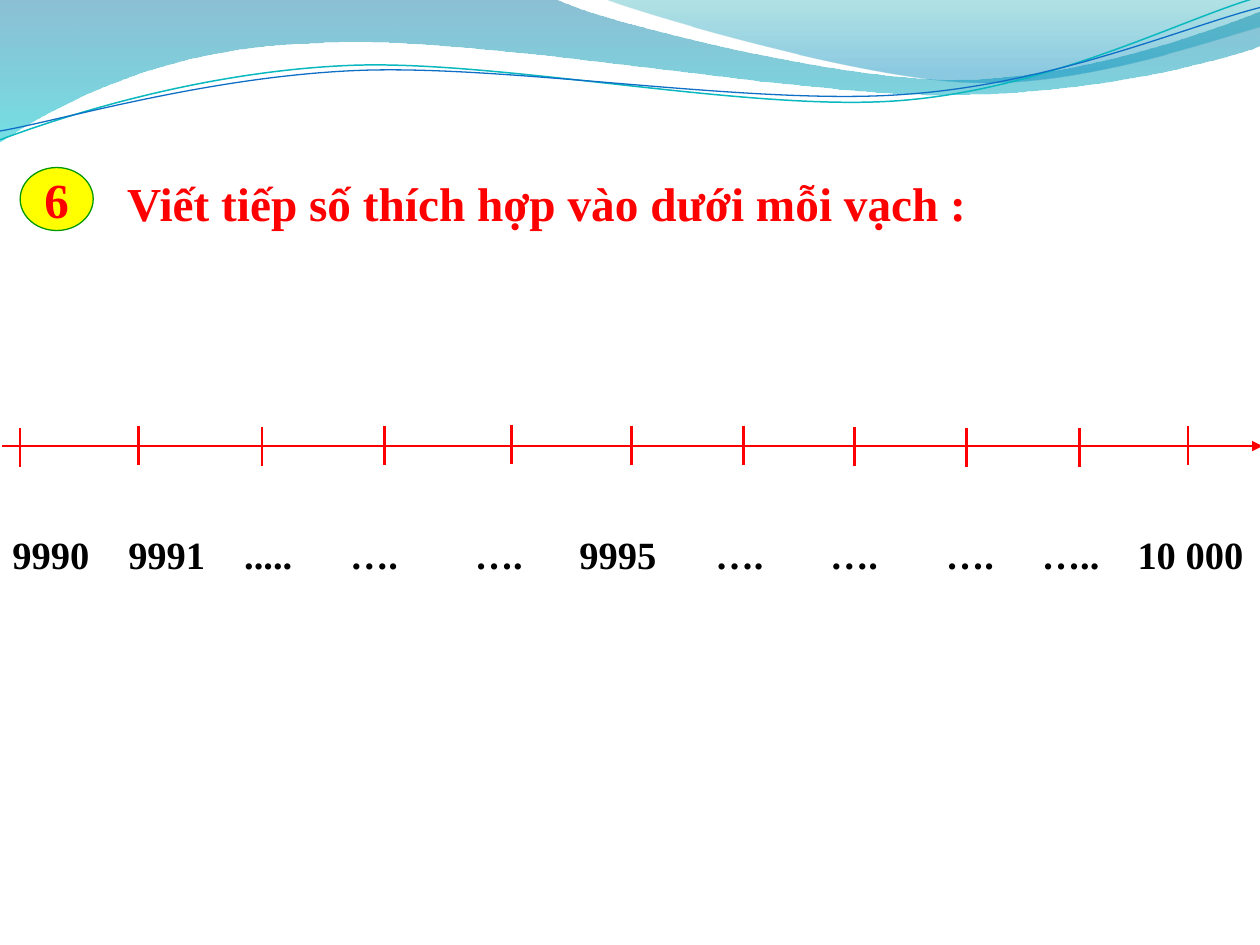
from typing import NamedTuple

from lxml import etree
from pptx import Presentation
from pptx.dml.color import RGBColor
from pptx.enum.shapes import MSO_CONNECTOR, MSO_SHAPE
from pptx.enum.text import MSO_ANCHOR, MSO_AUTO_SIZE, PP_ALIGN
from pptx.oxml.ns import qn
from pptx.util import Inches, Pt

STRAIGHT = MSO_CONNECTOR.STRAIGHT
OVAL = MSO_SHAPE.OVAL
MIDDLE, TOP = MSO_ANCHOR.MIDDLE, MSO_ANCHOR.TOP
LEFT, CENTER = PP_ALIGN.LEFT, PP_ALIGN.CENTER
NO_FIT = MSO_AUTO_SIZE.NONE

COLORS = {
    "red": "FF0000", "black": "000000", "yellow": "FFFF00", "green": "009900",
    "teal_line": "0AB8BF", "blue_line": "0F6FC6",
    "deep_blue": "0074A1", "cyan": "00C6CF", "teal": "00A1A9", "sky": "008BBF",
}
FONT = "Times New Roman"
WIDTH, HEIGHT = Inches(10), Inches(7.5)

Point = tuple[float, float]


class Stop(NamedTuple):
    position: float
    color: str
    alpha: int


class Wave(NamedTuple):
    """Points in inches: two values are a straight step, six a Bezier curve."""
    start: Point
    steps: list[tuple[float, ...]]
    stops: tuple[Stop, ...] = ()
    line: str = ""
    weight: float = 0


class Tick(NamedTuple):
    x: float
    top: float


class Label(NamedTuple):
    text: str
    left: float


WAVES = [
    Wave((0, 0), [(4.4, -0.01), (4.76, 0.17, 6.64, 0.63, 7.58, 0.63),
                  (8.53, 0.63, 9.58, 0.26, 10, 0.09), (10.01, 0.36),
                  (9.83, 0.44, 8.7, 0.76, 7.46, 0.75),
                  (6.22, 0.75, 3.82, 0.28, 2.57, 0.34),
                  (1.29, 0.36, 0.46, 0.83, -0.01, 1.13)],
         stops=(Stop(0, "deep_blue", 45), Stop(1, "cyan", 55))),
    Wave((4.79, -0.01), [(5.09, 0.11, 6.82, 0.62, 7.69, 0.65),
                         (8.56, 0.69, 9.61, 0.32, 10, 0.21), (10, 0)],
         stops=(Stop(0, "teal", 30), Stop(0.8, "sky", 45))),
    Wave((0, 1.11), [(0.48, 0.93, 1.58, 0.57, 2.77, 0.52),
                     (3.95, 0.47, 5.93, 0.89, 7.13, 0.8),
                     (8.33, 0.71, 9.38, 0.15, 9.98, -0.02)],
         line="teal_line", weight=0.85),
    Wave((0, 1.04), [(0.47, 0.96, 1.64, 0.61, 2.83, 0.56),
                     (4.03, 0.51, 5.97, 0.84, 7.17, 0.75),
                     (8.36, 0.67, 9.41, 0.21, 10, 0.06)],
         line="blue_line", weight=0.75),
]

AXIS_Y, TICK_HEIGHT = 3.54, 0.31
TICKS = [Tick(0.16, 3.4), Tick(1.1, 3.38), Tick(2.08, 3.39), Tick(3.05, 3.38),
         Tick(4.06, 3.37), Tick(5.01, 3.38), Tick(5.9, 3.38), Tick(6.78, 3.39),
         Tick(7.67, 3.4), Tick(8.57, 3.4), Tick(9.43, 3.38)]
LABELS = [Label("9990", 0), Label("9991", 0.92), Label(".....", 1.84),
          Label("….", 2.68), Label("….", 3.67), Label("9995", 4.5),
          Label("….", 5.58), Label("….", 6.49), Label("….", 7.41),
          Label("…..", 8.17), Label("10 000", 8.93)]


def rgb(name: str) -> RGBColor:
    return RGBColor.from_string(COLORS[name])


def place(shape, left: float, top: float, width: float, height: float) -> None:
    shape.left, shape.top = Inches(left), Inches(top)
    shape.width, shape.height = Inches(width), Inches(height)


def write(shape, text: str, size: float, color: str, align, anchor, wrap: bool = True):
    frame = shape.text_frame
    frame.word_wrap, frame.vertical_anchor = wrap, anchor
    frame.auto_size = NO_FIT
    paragraph = frame.paragraphs[0]
    paragraph.text, paragraph.alignment = text, align
    font = paragraph.font
    font.name, font.size, font.bold = FONT, Pt(size), True
    font.color.rgb = rgb(color)
    return paragraph


def bend(shape, steps: list[tuple[float, ...]]) -> None:
    """Join the three segments of each six-value step into one Bezier curve."""
    segments = iter(list(shape._element.spPr.iter(qn("a:lnTo"))))
    for step in steps:
        first = next(segments)
        if len(step) == 2:
            continue
        curve = etree.Element(qn("a:cubicBezTo"))
        first.addprevious(curve)
        for segment in (first, next(segments), next(segments)):
            curve.append(segment[0])
            segment.getparent().remove(segment)


def draw_wave(slide, wave: Wave) -> None:
    points = [wave.start] + [step[i:i + 2] for step in wave.steps
                             for i in range(0, len(step), 2)]
    emu = [(Inches(x), Inches(y)) for x, y in points]
    builder = slide.shapes.build_freeform(*emu[0], scale=1.0)
    builder.add_line_segments(emu[1:], close=bool(wave.stops))
    shape = builder.convert_to_shape()
    bend(shape, wave.steps)
    shape.shadow.inherit = False
    if not wave.stops:
        shape.fill.background()
        shape.line.color.rgb = rgb(wave.line)
        shape.line.width = Pt(wave.weight)
        return
    shape.line.fill.background()
    shape.fill.gradient()
    shape.fill.gradient_angle = 270
    for target, stop in zip(shape.fill.gradient_stops, wave.stops):
        target.position = stop.position
        target.color.rgb = rgb(stop.color)
    for node, stop in zip(shape._element.spPr.iter(qn("a:srgbClr")), wave.stops):
        etree.SubElement(node, qn("a:alpha"), val=str(stop.alpha * 1000))


def draw_line(slide, start: Point, end: Point, arrow: bool = False) -> None:
    line = slide.shapes.add_connector(
        STRAIGHT, *(Inches(v) for v in (*start, *end)))
    line.line.color.rgb = rgb("red")
    line.line.width = Pt(1.5)
    if arrow:
        etree.SubElement(line.line._get_or_add_ln(), qn("a:tailEnd"), type="triangle")
    etree.SubElement(line._element.spPr, qn("a:effectLst"))


def draw_labels(slide) -> None:
    box = slide.shapes.add_textbox(0, Inches(3.56), WIDTH, Inches(1.38))
    box.text_frame.margin_top = Inches(0.35)
    row = write(box, "\t".join(label.text for label in LABELS),
                22, "black", LEFT, MIDDLE)
    tabs = etree.Element(qn("a:tabLst"))
    row._p.get_or_add_pPr().find(qn("a:defRPr")).addprevious(tabs)
    for label in LABELS[1:]:
        etree.SubElement(tabs, qn("a:tab"), pos=str(Inches(label.left)), algn="l")


def main() -> None:
    deck = Presentation()
    deck.slide_width, deck.slide_height = WIDTH, HEIGHT
    slide = deck.slides.add_slide(deck.slide_layouts[5])

    # Wavy header
    for wave in WAVES:
        draw_wave(slide, wave)

    # Number line
    draw_line(slide, (0.02, AXIS_Y), (10.02, AXIS_Y), arrow=True)
    for tick in TICKS:
        draw_line(slide, tick, (tick.x, tick.top + TICK_HEIGHT))
    draw_labels(slide)

    # Exercise number and task
    badge = slide.shapes.add_shape(OVAL, 0, 0, 0, 0)
    place(badge, 0.16, 1.33, 0.58, 0.5)
    badge.shadow.inherit = False
    badge.fill.solid()
    badge.fill.fore_color.rgb = rgb("yellow")
    badge.line.color.rgb = rgb("green")
    badge.line.width = Pt(0.75)
    write(badge, "6", 28, "red", CENTER, MIDDLE, wrap=False)

    task = slide.shapes.title
    place(task, 0.91, 1.33, 9.17, 0.56)
    write(task, "Viết tiếp số thích hợp vào dưới mỗi vạch :", 27, "red", LEFT, TOP)

    deck.save("out.pptx")


if __name__ == "__main__":
    main()
